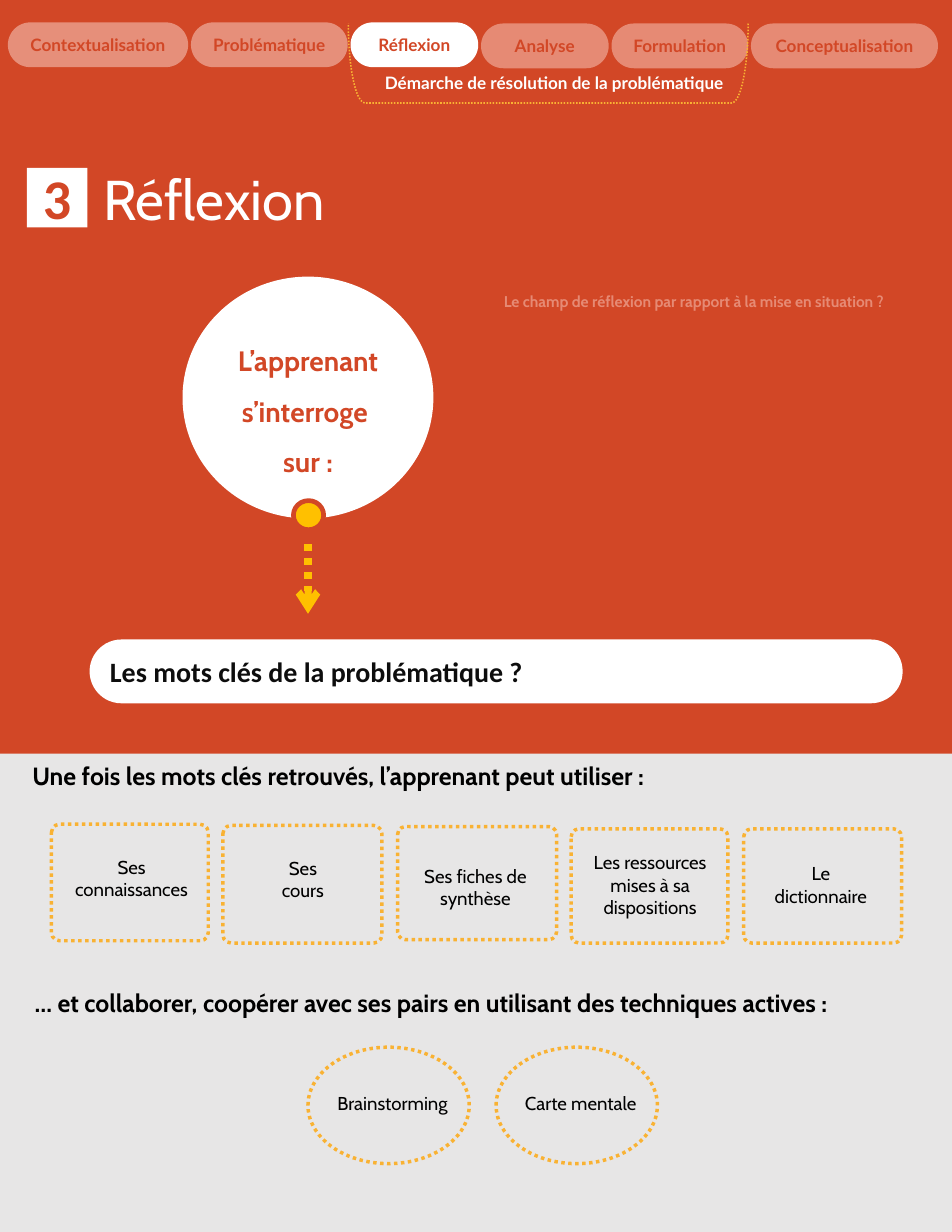
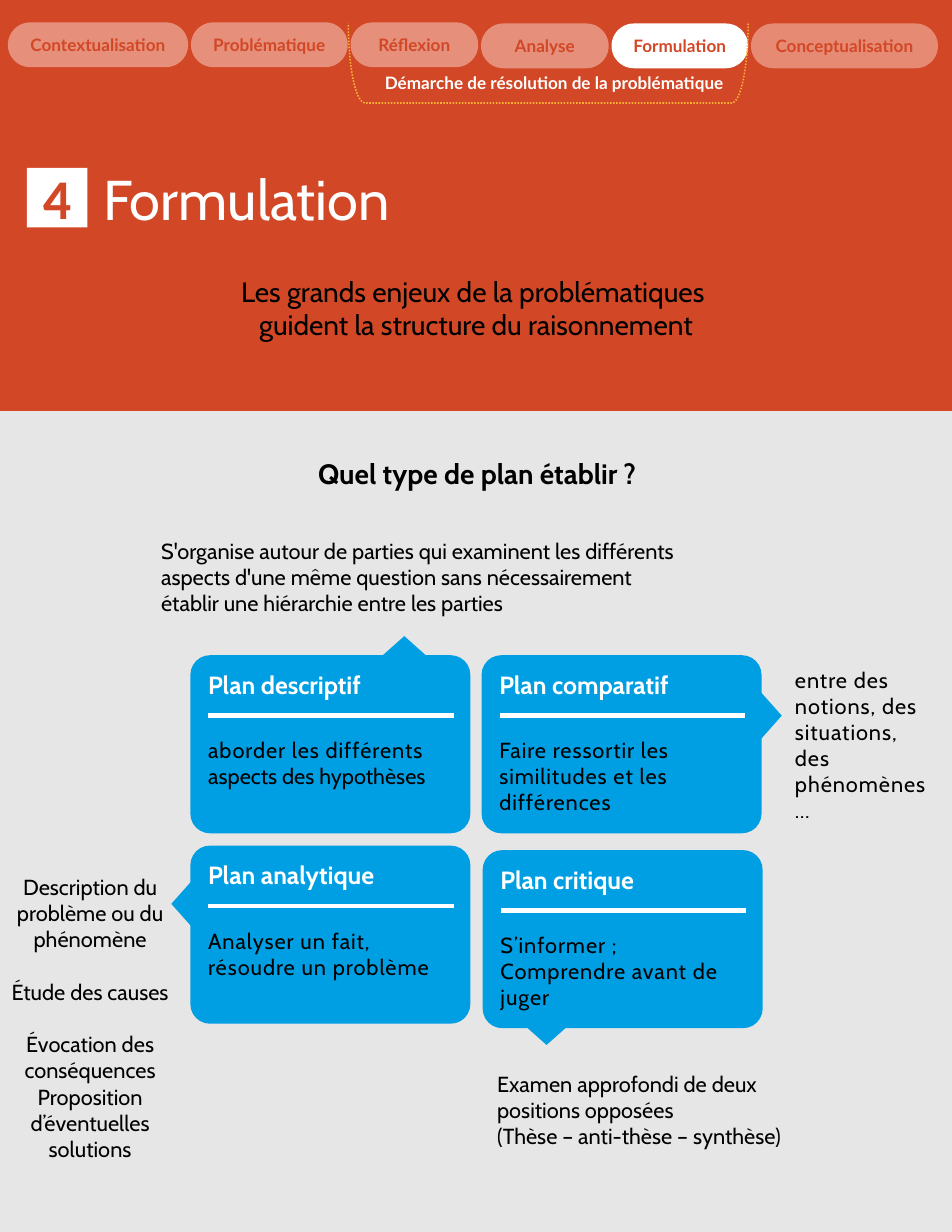
import dataclasses
from typing import NamedTuple, Optional

import lxml.etree
import pptx
import pptx.dml.color
import pptx.enum.shapes
import pptx.enum.text
import pptx.oxml.ns
import pptx.util

Inches = pptx.util.Inches
Pt = pptx.util.Pt
MSO = pptx.enum.shapes.MSO_SHAPE
ALIGN = pptx.enum.text.PP_ALIGN
qn = pptx.oxml.ns.qn


# ---- Theme ----
class Style(NamedTuple):
    font: str
    size: float
    color: str
    bold: bool = False


@dataclasses.dataclass(frozen=True)
class Theme:
    red: str = "D24726"
    white: str = "FFFFFF"
    grey: str = "E7E6E6"
    blue: str = "009FE3"
    yellow: str = "FFC000"
    amber: str = "F9B233"
    tab_past: str = "E68F7A"
    tab_next: str = "E68A74"
    title: Style = Style("Cabin", 36, "FFFFFF")
    number: Style = Style("Calibri", 36, "D24726", True)
    tab: Style = Style("Lato", 11, "D24726", True)
    process: Style = Style("Lato", 11, "FFFFFF", True)
    circle: Style = Style("Cabin", 18, "D24726", True)
    hint: Style = Style("Cabin", 10, "E68A74", True)
    keyword: Style = Style("Calibri", 18, "0D0D0D", True)
    heading: Style = Style("Cabin", 16, "000000", True)
    label: Style = Style("Cabin", 12, "000000")
    lead: Style = Style("Cabin", 18, "000000")
    question: Style = Style("Cabin", 18, "000000", True)
    body: Style = Style("Cabin", 14, "000000")
    card_title: Style = Style("Cabin", 16, "FFFFFF", True)
    tracking: float = 0.6


T = Theme()


# ---- Descriptions of repeated elements ----
class Box(NamedTuple):
    x: float
    y: float
    w: float
    h: float


class Tab(NamedTuple):
    name: str
    width: float
    top: float


class Tool(NamedTuple):
    lines: tuple[str, ...]
    outline: Box
    label: Box
    kind: MSO = MSO.ROUNDED_RECTANGLE


class Card(NamedTuple):
    title: str
    body: tuple[tuple[str, float], ...]  # (line, letter spacing)
    x: float
    y: float
    text_h: float
    pointer: Box
    turn: float


TABS = (
    Tab("Contextualisation", 1.61, 0.2),
    Tab("Problématique", 1.4, 0.2),
    Tab("Réflexion", 1.14, 0.2),
    Tab("Analyse", 1.14, 0.21),
    Tab("Formulation", 1.22, 0.21),
    Tab("Conceptualisation", 1.67, 0.21),
)
TAB_LEFT, TAB_GAP, TAB_H = 0.07, 0.025, 0.4

TOOLS = (
    Tool(("Ses connaissances",), Box(0.46, 7.36, 1.4, 1.04), Box(0.49, 7.59, 1.37, 0.51)),
    Tool(("Ses", "cours"), Box(1.99, 7.37, 1.42, 1.05), Box(2, 7.6, 1.41, 0.5)),
    Tool(("Ses fiches de synthèse",), Box(3.55, 7.38, 1.42, 1.01), Box(3.54, 7.67, 1.41, 0.5)),
    Tool(("Les ressources mises à sa dispositions",), Box(5.1, 7.4, 1.4, 1.02),
         Box(5.11, 7.55, 1.39, 0.71)),
    Tool(("Le", "dictionnaire"), Box(6.64, 7.4, 1.41, 1.02), Box(6.63, 7.65, 1.4, 0.5)),
    Tool(("Brainstorming",), Box(2.75, 9.35, 1.44, 1.04), Box(2.8, 9.7, 1.41, 0.3), MSO.OVAL),
    Tool(("Carte mentale",), Box(4.43, 9.35, 1.44, 1.04), Box(4.48, 9.7, 1.41, 0.3), MSO.OVAL),
)

CARDS = (
    Card("Plan descriptif",
         (("aborder les différents", T.tracking), ("aspects des hypothèses", 0)),
         1.7, 5.85, 1.18, Box(3.34, 5.68, 0.54, 0.24), 0),
    Card("Plan analytique", (("Analyser un fait, résoudre un problème", T.tracking),),
         1.7, 7.55, 1.18, Box(1.38, 7.95, 0.54, 0.24), 270),
    Card("Plan comparatif",
         (("Faire ressortir les similitudes et les différences", T.tracking),),
         4.3, 5.85, 1.41, Box(6.59, 6.27, 0.54, 0.24), 90),
    Card("Plan critique",
         (("S’informer ;", T.tracking), ("Comprendre avant de juger", T.tracking)),
         4.31, 7.59, 1.41, Box(4.61, 9.09, 0.54, 0.24), 180),
)


# ---- Drawing helpers ----
def rgb(color: str) -> pptx.dml.color.RGBColor:
    return pptx.dml.color.RGBColor.from_string(color)


def emu(box: Box) -> list:
    return [Inches(v) for v in box]


def style_paragraph(p, style: Style, align=ALIGN.LEFT) -> None:
    p.alignment = align
    p.font.name = style.font
    p.font.size = Pt(style.size)
    p.font.bold = style.bold
    p.font.color.rgb = rgb(style.color)


def track(r, points: float) -> None:
    r._r.get_or_add_rPr().set("spc", str(round(points * 100)))


def fill_text(tf, lines: tuple[str, ...], style: Style, align=ALIGN.LEFT) -> None:
    tf.word_wrap = True
    for i, line in enumerate(lines):
        p = tf.add_paragraph() if i else tf.paragraphs[0]
        p.add_run().text = line
        style_paragraph(p, style, align)


def add_text(slide, box: Box, lines: tuple[str, ...], style: Style,
             align=ALIGN.LEFT, spacing: Optional[float] = None):
    tf = slide.shapes.add_textbox(*emu(box)).text_frame
    fill_text(tf, lines, style, align)
    for p in tf.paragraphs:
        p.line_spacing = spacing
    return tf


def set_line(line, color: str, width: float, dotted: bool = False, arrow: bool = False) -> None:
    line.color.rgb = rgb(color)
    line.width = Pt(width)
    ln = line._get_or_add_ln()
    if dotted:
        lxml.etree.SubElement(ln, qn("a:prstDash"), val="sysDot")
    if arrow:
        lxml.etree.SubElement(ln, qn("a:tailEnd"), type="arrow")


def add_shape(slide, kind: MSO, box: Box, fill: Optional[str] = None,
              adj: Optional[float] = None, turn: float = 0):
    sp = slide.shapes.add_shape(kind, *emu(box))
    sp.shadow.inherit = False
    sp.rotation = turn
    sp.line.fill.background()
    if fill:
        sp.fill.solid()
        sp.fill.fore_color.rgb = rgb(fill)
    else:
        sp.fill.background()
    if adj is not None:
        sp.adjustments[0] = adj
    return sp


def add_line(slide, x1: float, y1: float, x2: float, y2: float, color: str, width: float,
             dotted: bool = False, arrow: bool = False) -> None:
    cxn = slide.shapes.add_connector(pptx.enum.shapes.MSO_CONNECTOR.STRAIGHT,
                                     *emu(Box(x1, y1, x2, y2)))
    set_line(cxn.line, color, width, dotted, arrow)
    lxml.etree.SubElement(cxn._element.spPr, qn("a:effectLst"))


# ---- Shared slide frame ----
def add_tabs(slide, current: int) -> None:
    x = TAB_LEFT
    for i, tab in enumerate(TABS):
        fill = T.white if i == current else T.tab_past if i < current else T.tab_next
        sp = add_shape(slide, MSO.ROUNDED_RECTANGLE, Box(x, tab.top, tab.width, TAB_H), fill, 0.5)
        fill_text(sp.text_frame, (tab.name,), T.tab, ALIGN.CENTER)
        x += tab.width + TAB_GAP
    add_text(slide, Box(3.08, 0.6, 3.74, 0.29),
             ("Démarche de résolution de la problématique",), T.process, ALIGN.CENTER)
    bracket = add_shape(slide, MSO.RIGHT_BRACKET, Box(4.54, -1.22, 0.71, 3.57), adj=0.21, turn=90)
    set_line(bracket.line, T.amber, 1, dotted=True)


def add_step(prs, number: int, current: int, band_top: float):
    slide = prs.slides.add_slide(prs.slide_layouts[5])
    add_shape(slide, MSO.RECTANGLE, Box(0, band_top, 8.5, 11 - band_top), T.grey)
    title = slide.shapes.title
    title.left, title.top, title.width, title.height = emu(Box(0.82, 1.42, 6.58, 0.71))
    tf = title.text_frame
    tf.auto_size = pptx.enum.text.MSO_AUTO_SIZE.NONE
    tf.vertical_anchor = pptx.enum.text.MSO_ANCHOR.TOP
    fill_text(tf, (TABS[current].name,), T.title)
    add_shape(slide, MSO.RECTANGLE, Box(0.24, 1.5, 0.54, 0.53), T.white)
    add_text(slide, Box(0.2, 1.41, 0.62, 0.71), (str(number),), T.number, ALIGN.CENTER)
    add_tabs(slide, current)
    return slide


# ---- Slide parts ----
def add_tool(slide, tool: Tool) -> None:
    adj = 0.07 if tool.kind == MSO.ROUNDED_RECTANGLE else None
    sp = add_shape(slide, tool.kind, tool.outline, adj=adj)
    set_line(sp.line, T.amber, 2.25, dotted=True)
    add_text(slide, tool.label, tool.lines, T.label, ALIGN.CENTER)


def add_card(slide, card: Card) -> None:
    x, y = card.x, card.y
    add_shape(slide, MSO.ISOSCELES_TRIANGLE, card.pointer, T.blue, turn=card.turn)
    add_shape(slide, MSO.ROUNDED_RECTANGLE, Box(x, y, 2.5, 1.59), T.blue, 0.11)
    tf = add_text(slide, Box(x + 0.06, y + 0.08, 2.39, card.text_h), (card.title,), T.card_title)
    tf.paragraphs[0].space_after = Pt(18)
    p = tf.add_paragraph()
    p.space_before = Pt(6)
    style_paragraph(p, T.body)
    for i, (line, spacing) in enumerate(card.body):
        if i:
            p.add_line_break()
        r = p.add_run()
        r.text = line
        track(r, spacing)
    add_line(slide, x + 0.16, y + 0.54, x + 2.35, y + 0.54, T.white, 3)


def build_reflexion(prs) -> None:
    slide = add_step(prs, 3, 2, 6.73)
    # Question circle and its arrow
    add_line(slide, 2.75, 4.86, 2.75, 5.48, T.yellow, 4.5, dotted=True, arrow=True)
    add_shape(slide, MSO.OVAL, Box(1.63, 2.47, 2.24, 2.16), T.white)
    add_text(slide, Box(1.61, 2.87, 2.28, 1.46), ("L’apprenant s’interroge ", "sur :"),
             T.circle, ALIGN.CENTER, 1.5)
    dot = add_shape(slide, MSO.OVAL, Box(2.62, 4.47, 0.27, 0.26), T.yellow)
    set_line(dot.line, T.red, 3)
    add_text(slide, Box(4.4, 2.47, 4.1, 0.35),
             ("Le champ de réflexion par rapport à la mise en situation ?",),
             T.hint, ALIGN.JUSTIFY, 1.5)
    sp = add_shape(slide, MSO.ROUNDED_RECTANGLE, Box(0.8, 5.71, 7.26, 0.57), T.white, 0.5)
    fill_text(sp.text_frame, ("Les mots clés de la problématique ?",), T.keyword, ALIGN.JUSTIFY)
    # Tools and techniques
    add_text(slide, Box(0.19, 6.74, 7.84, 0.37),
             ("Une fois les mots clés retrouvés, l’apprenant peut utiliser :",), T.heading)
    add_text(slide, Box(0.21, 8.77, 8.29, 0.37),
             ("… et collaborer, coopérer avec ses pairs en utilisant des techniques actives :",),
             T.heading)
    for tool in TOOLS:
        add_tool(slide, tool)


def build_formulation(prs) -> None:
    slide = add_step(prs, 4, 4, 3.67)
    add_text(slide, Box(0, 2.4, 8.5, 0.71),
             ("Les grands enjeux de la problématiques ", "guident la structure du raisonnement"),
             T.lead, ALIGN.CENTER)
    add_text(slide, Box(2.57, 4.03, 3.38, 0.4), ("Quel type de plan établir ?",),
             T.question, ALIGN.CENTER)
    for card in CARDS:
        add_card(slide, card)
    # Explanations around the cards
    add_text(slide, Box(1.34, 4.75, 4.83, 1.04),
             ("S'organise autour de parties qui examinent les différents aspects d'une même "
              "question sans nécessairement établir une hiérarchie entre les parties",), T.body)
    tf = add_text(slide, Box(-0.07, 7.75, 1.75, 2.69),
                  ("Description du problème ou du phénomène", "Étude des causes",
                   "Évocation des conséquences", "Proposition d’éventuelles solutions"),
                  T.body, ALIGN.CENTER)
    for p in tf.paragraphs[1:3]:
        p.space_before = Pt(17)
    tf = add_text(slide, Box(7, 5.9, 1.43, 1.51),
                  ("entre des notions, des situations, des phénomènes…",), T.body)
    tf.paragraphs[0].space_before = Pt(6)
    track(tf.paragraphs[0].runs[0], T.tracking)
    add_text(slide, Box(4.34, 9.51, 3.06, 0.81),
             ("Examen approfondi de deux positions opposées",
              "(Thèse – anti-thèse – synthèse)"), T.body)


def main() -> None:
    prs = pptx.Presentation()
    prs.slide_width, prs.slide_height = Inches(8.5), Inches(11)
    fill = prs.slide_master.background.fill
    fill.solid()
    fill.fore_color.rgb = rgb(T.red)
    build_reflexion(prs)
    build_formulation(prs)
    prs.save("out.pptx")


if __name__ == "__main__":
    main()
